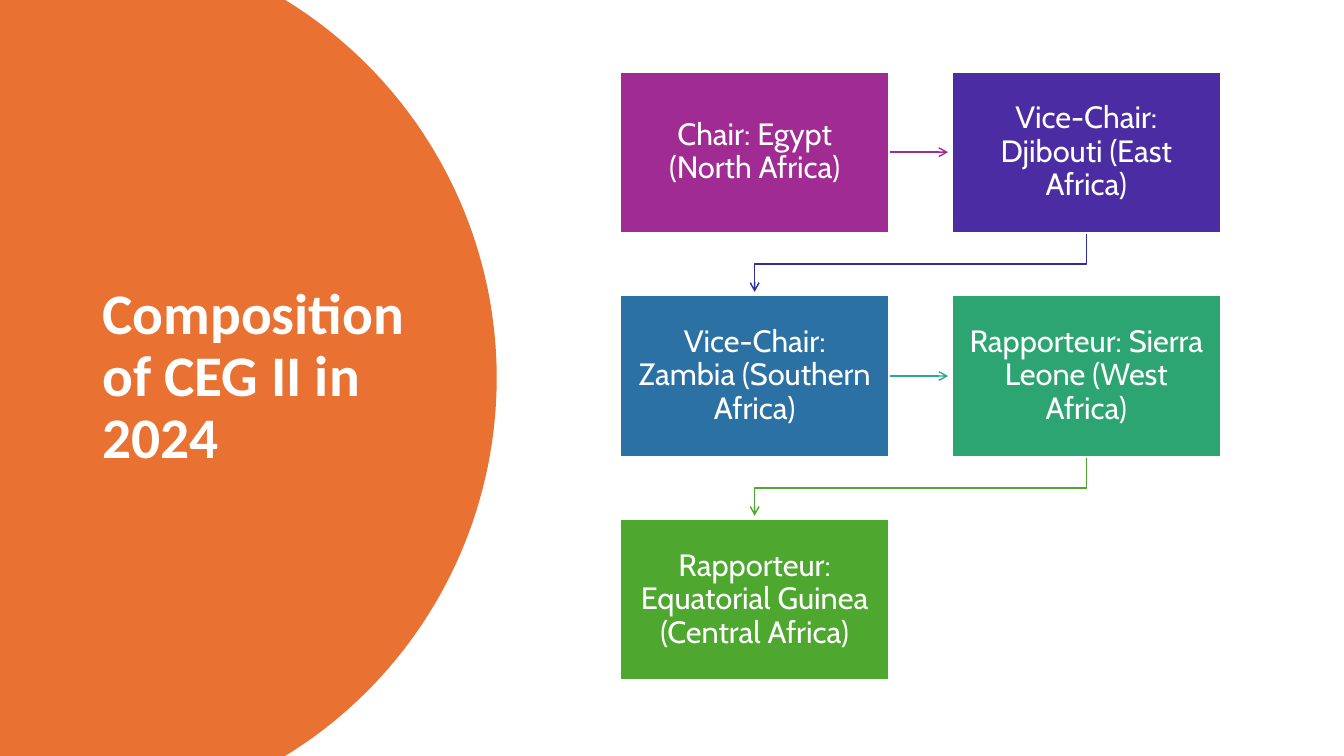
from dataclasses import dataclass
from math import asin, cos, sin

from lxml.etree import SubElement
from pptx import Presentation
from pptx.dml.color import RGBColor
from pptx.enum.shapes import MSO_CONNECTOR, MSO_SHAPE
from pptx.enum.text import MSO_ANCHOR, MSO_AUTO_SIZE, PP_ALIGN
from pptx.oxml.ns import qn
from pptx.util import Pt


@dataclass(frozen=True)
class Theme:
    orange: str = "E97132"
    white: str = "FFFFFF"
    title_font: str = "Calibri"
    box_font: str = "Cabin"
    title_size: float = 41
    box_size: float = 22
    border: float = 1.5
    arrow: float = 1


THEME = Theme()
SLIDE_WIDTH, SLIDE_HEIGHT = 960, 540
ARC_CENTRE, ARC_RADIUS, ARC_STEPS = 38, 316.8, 80
GRID_LEFT, GRID_TOP = 442.8, 51.1
BOX_WIDTH, BOX_HEIGHT = 192.5, 115.2
COLUMN_STEP, ROW_STEP = 236.9, 159.9
ARROW_GAP = 2.5

MEMBERS = [
    ("Chair: Egypt (North Africa)", "A02B93"),
    ("Vice-Chair: Djibouti (East Africa)", "4B2CA2"),
    ("Vice-Chair: Zambia (Southern Africa)", "2C71A4"),
    ("Rapporteur: Sierra Leone (West Africa)", "2DA573"),
    ("Rapporteur: Equatorial Guinea (Central Africa)", "4EA72E"),
]
ARROW_COLOURS = ["A02B93", "2C2EA2", "2DA594", "4EA72E"]


def write_text(shape, text, *, size, font, bold=False, align=PP_ALIGN.LEFT, margins=(7.2, 3.6)):
    frame = shape.text_frame
    frame.word_wrap = True
    frame.auto_size = MSO_AUTO_SIZE.NONE
    frame.vertical_anchor = MSO_ANCHOR.MIDDLE
    frame.margin_left = frame.margin_right = Pt(margins[0])
    frame.margin_top = frame.margin_bottom = Pt(margins[1])
    paragraph = frame.paragraphs[0]
    paragraph.text = text
    paragraph.alignment = align
    paragraph.line_spacing = 0.9
    paragraph.space_before = Pt(0)
    paragraph.font.size = Pt(size)
    paragraph.font.name = font
    paragraph.font.bold = bold
    paragraph.font.color.rgb = RGBColor.from_string(THEME.white)


def fill_shape(shape, colour):
    shape.shadow.inherit = False
    shape.fill.solid()
    shape.fill.fore_color.rgb = RGBColor.from_string(colour)


def add_outline(slide, points, close):
    corners = [(Pt(x), Pt(y)) for x, y in points]
    builder = slide.shapes.build_freeform(*corners[0])
    builder.add_line_segments(corners[1:], close=close)
    return builder.convert_to_shape()


def add_title(slide, text):
    title = slide.shapes.title
    title.left, title.top, title.width, title.height = Pt(66), Pt(50.4), Pt(232.6), Pt(438.5)
    write_text(title, text, size=THEME.title_size, font=THEME.title_font, bold=True)
    return title


def add_orange_panel(slide, title):
    middle = SLIDE_HEIGHT / 2
    limit = asin(middle / ARC_RADIUS)
    angles = [limit * (2 * step / ARC_STEPS - 1) for step in range(ARC_STEPS + 1)]
    arc = [(ARC_CENTRE + ARC_RADIUS * cos(a), middle + ARC_RADIUS * sin(a)) for a in angles]
    panel = add_outline(slide, [(0, 0), *arc, (0, SLIDE_HEIGHT)], close=True)
    fill_shape(panel, THEME.orange)
    panel.line.fill.background()
    title.element.addprevious(panel.element)


def box_corner(index):
    row, column = divmod(index, 2)
    return GRID_LEFT + column * COLUMN_STEP, GRID_TOP + row * ROW_STEP


def add_box(slide, index, text, colour):
    left, top = box_corner(index)
    box = slide.shapes.add_shape(
        MSO_SHAPE.RECTANGLE, Pt(left), Pt(top), Pt(BOX_WIDTH), Pt(BOX_HEIGHT)
    )
    fill_shape(box, colour)
    box.line.color.rgb = RGBColor.from_string(THEME.white)
    box.line.width = Pt(THEME.border)
    write_text(box, text, size=THEME.box_size, font=THEME.box_font,
               align=PP_ALIGN.CENTER, margins=(9.4, 9.9))


def style_arrow(arrow, colour):
    arrow.line.color.rgb = RGBColor.from_string(colour)
    arrow.line.width = Pt(THEME.arrow)
    SubElement(arrow.line._get_or_add_ln(), qn("a:tailEnd"), type="arrow")


def add_straight_arrow(slide, index, colour):
    left, top = box_corner(index)
    middle = Pt(top + BOX_HEIGHT / 2)
    arrow = slide.shapes.add_connector(
        MSO_CONNECTOR.STRAIGHT, Pt(left + BOX_WIDTH), middle,
        Pt(left + COLUMN_STEP - ARROW_GAP), middle
    )
    style_arrow(arrow, colour)
    SubElement(arrow.element.spPr, qn("a:effectLst"))


def add_elbow_arrow(slide, index, colour):
    left, top = box_corner(index)
    start = left + BOX_WIDTH / 2
    end_left, end_top = box_corner(index + 1)
    end = end_left + BOX_WIDTH / 2
    bottom = top + BOX_HEIGHT
    bend = (bottom + end_top) / 2
    points = [(start, bottom), (start, bend), (end, bend), (end, end_top - ARROW_GAP)]
    arrow = add_outline(slide, points, close=False)
    arrow.fill.background()
    style_arrow(arrow, colour)
    arrow.shadow.inherit = False


def main():
    presentation = Presentation()
    presentation.slide_width = Pt(SLIDE_WIDTH)
    presentation.slide_height = Pt(SLIDE_HEIGHT)
    slide = presentation.slides.add_slide(presentation.slide_layouts[5])
    title = add_title(slide, "Composition of CEG II in 2024")
    add_orange_panel(slide, title)
    for index, colour in enumerate(ARROW_COLOURS):
        add_arrow = add_elbow_arrow if index % 2 else add_straight_arrow
        add_arrow(slide, index, colour)
    for index, (text, colour) in enumerate(MEMBERS):
        add_box(slide, index, text, colour)
    presentation.save("out.pptx")


if __name__ == "__main__":
    main()
